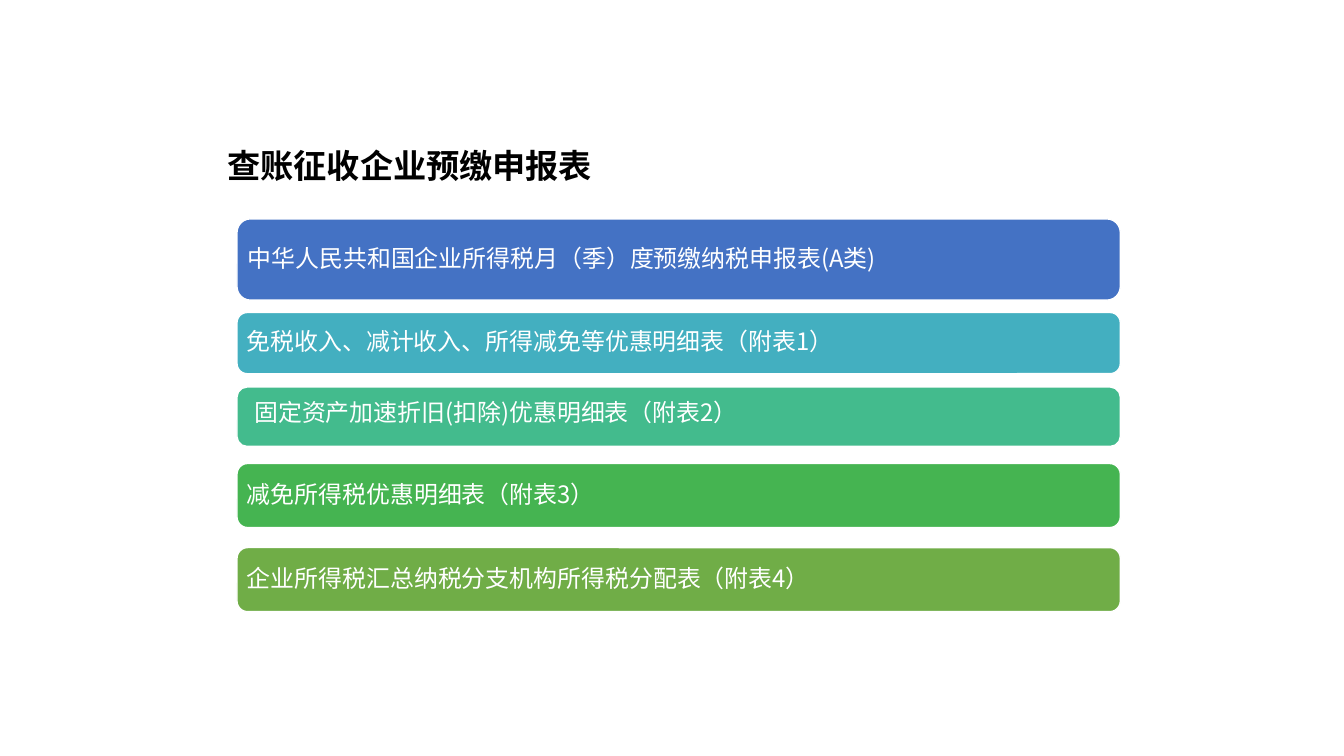
from lxml.etree import SubElement
from pptx import Presentation
from pptx.dml.color import RGBColor
from pptx.enum.shapes import MSO_SHAPE as Shape
from pptx.enum.text import MSO_ANCHOR as Anchor, PP_ALIGN as Align
from pptx.oxml.ns import qn
from pptx.util import Inches, Pt

BLACK = RGBColor(0x00, 0x00, 0x00)
WHITE = RGBColor(0xFF, 0xFF, 0xFF)
BLUE = RGBColor(0x44, 0x72, 0xC4)
TEAL = RGBColor(0x43, 0xAF, 0xC0)
SEA_GREEN = RGBColor(0x43, 0xBB, 0x8D)
GREEN = RGBColor(0x45, 0xB4, 0x51)
OLIVE = RGBColor(0x70, 0xAD, 0x47)

FONT = "Noto Sans CJK SC"
BAR_LEFT, BAR_WIDTH = 2.48, 9.24
BAR_INSETS = (0.07, 0.07, 0.07, 0.07)
RAISED_INSETS = (0.15, 0.07, 0.07, 0.13)

# top, height, colour, insets, form name
FORMS = [
    (2.29, 0.85, BLUE, BAR_INSETS, "中华人民共和国企业所得税月（季）度预缴纳税申报表(A类)"),
    (3.27, 0.64, TEAL, BAR_INSETS, "免税收入、减计收入、所得减免等优惠明细表（附表1）"),
    (4.05, 0.62, SEA_GREEN, RAISED_INSETS, "固定资产加速折旧(扣除)优惠明细表（附表2）"),
    (4.85, 0.67, GREEN, BAR_INSETS, "减免所得税优惠明细表（附表3）"),
    (5.73, 0.67, OLIVE, BAR_INSETS, "企业所得税汇总纳税分支机构所得税分配表（附表4）"),
]


def apply(target, values):
    for name, value in values.items():
        setattr(target, name, value)


class FormSlide:
    def __init__(self, deck):
        self.page = deck.slides.add_slide(deck.slide_layouts[5])

    def set_text(self, shape, text, insets, size, color, bold=False, after=0):
        frame = shape.text_frame
        sides = ("margin_left", "margin_top", "margin_right", "margin_bottom")
        apply(frame, dict(zip(sides, map(Inches, insets))))
        apply(frame, {"word_wrap": True, "vertical_anchor": Anchor.MIDDLE})
        para = frame.paragraphs[0]
        apply(para, {"alignment": Align.LEFT, "line_spacing": 0.9,
                     "space_before": Pt(0), "space_after": Pt(after)})
        span = para.add_run()
        span.text = text
        apply(span.font, {"name": FONT, "size": Pt(size), "bold": bold})
        span.font.color.rgb = color
        # East Asian characters take their typeface from a:ea
        SubElement(span.font._element, qn("a:ea"), typeface=FONT)

    def title(self, text, left, top, width, height):
        box = self.page.shapes.title
        apply(box, {"left": Inches(left), "top": Inches(top),
                    "width": Inches(width), "height": Inches(height)})
        self.set_text(box, text, (0.11, 0.05, 0.11, 0.05), 25, BLACK, bold=True)

    def bar(self, top, height, color, insets, text):
        bar = self.page.shapes.add_shape(
            Shape.ROUNDED_RECTANGLE, Inches(BAR_LEFT), Inches(top),
            Inches(BAR_WIDTH), Inches(height))
        bar.shadow.inherit = False
        bar.fill.solid()
        bar.fill.fore_color.rgb = color
        bar.line.color.rgb = WHITE
        bar.line.width = Pt(1)
        self.set_text(bar, text, insets, 18, WHITE, after=6.3)


def main():
    deck = Presentation()
    apply(deck, {"slide_width": Inches(14.06), "slide_height": Inches(7.91)})
    slide = FormSlide(deck)
    slide.title("查账征收企业预缴申报表", 2.27, 1.48, 8.7, 0.56)
    for form in FORMS:
        slide.bar(*form)
    deck.save("out.pptx")


if __name__ == "__main__":
    main()
